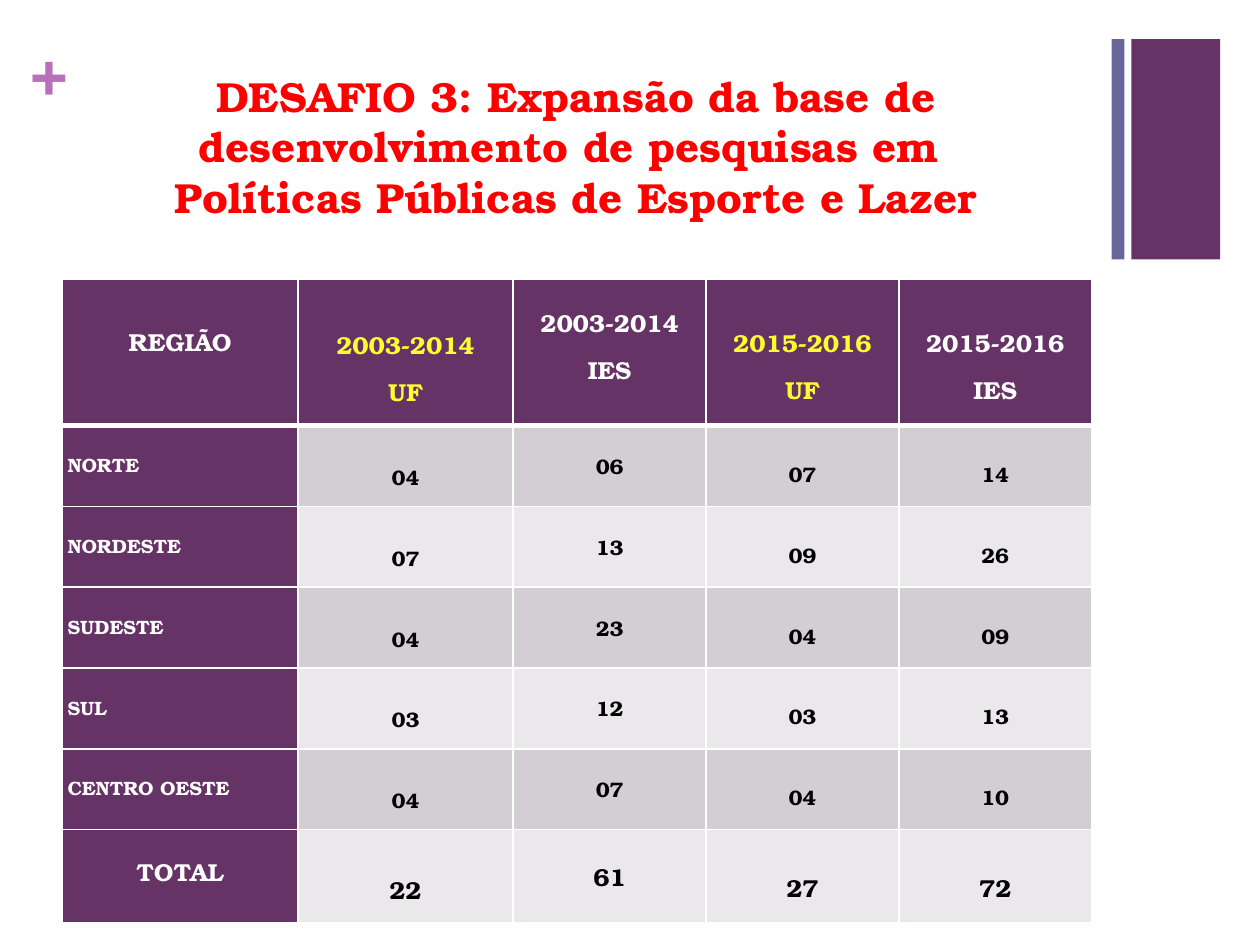
from lxml import etree
from pptx import Presentation
from pptx.dml.color import RGBColor
from pptx.enum.shapes import MSO_SHAPE
from pptx.enum.text import MSO_ANCHOR, MSO_AUTO_SIZE, PP_ALIGN
from pptx.oxml.ns import qn
from pptx.util import Pt

CENTER, LEFT = PP_ALIGN.CENTER, PP_ALIGN.LEFT
TOP = MSO_ANCHOR.TOP
NO_AUTOFIT = MSO_AUTO_SIZE.NONE
RECTANGLE = MSO_SHAPE.RECTANGLE

FONT = "TeX Gyre Bonum"
PURPLE = RGBColor(0x66, 0x33, 0x66)
BLUE = RGBColor(0x66, 0x66, 0x99)
ORCHID = RGBColor(0xB8, 0x70, 0xB8)
RED = RGBColor(0xFF, 0x00, 0x00)
YELLOW = RGBColor(0xFE, 0xFB, 0x31)
WHITE = RGBColor(0xFF, 0xFF, 0xFF)
BLACK = RGBColor(0x00, 0x00, 0x00)
BANDS = (RGBColor(0xD3, 0xCE, 0xD3), RGBColor(0xEA, 0xE8, 0xEA))

TITLE = ("DESAFIO 3: Expansão da base de desenvolvimento de pesquisas em ",
         "Políticas Públicas de Esporte e Lazer")
ROWS = (
    ("REGIÃO", "2003-2014\nUF", "2003-2014\nIES", "2015-2016\nUF", "2015-2016\nIES"),
    ("NORTE", "04", "06", "07", "14"),
    ("NORDESTE", "07", "13", "09", "26"),
    ("SUDESTE", "04", "23", "04", "09"),
    ("SUL", "03", "12", "03", "13"),
    ("CENTRO OESTE", "04", "07", "04", "10"),
    ("TOTAL", "22", "61", "27", "72"),
)
COLUMN_WIDTHS = (134.6, 123.1, 110.2, 110.2, 110.2)
HEADER_HEIGHT, REGION_HEIGHT, TOTAL_HEIGHT = 83.4, 46.2, 53.1
HEADER_INSETS = (24.8, 26.5, 13.9, 25.3, 25.3)
REGION_INSETS = (14.2, 20.4, 14.1, 18.7, 18.7)
TOTAL_INSETS = (13.4, 23.6, 16.2, 22.5, 22.5)


def write_lines(frame, lines, size, color, align, gap=0):
    """Write each line as a bold paragraph, with a gap between paragraphs."""
    for index, line in enumerate(lines):
        paragraph = frame.add_paragraph() if index else frame.paragraphs[0]
        paragraph.alignment = align
        paragraph.space_before = Pt(gap if index else 0)
        run = paragraph.add_run()
        run.text = line
        run.font.name, run.font.size, run.font.bold = FONT, Pt(size), True
        run.font.color.rgb = color


def add_ornament(slide, left, top, width, height):
    """Draw the thin blue bar and the wide purple block beside it."""
    bar_width, gap = 7.4, 3.9
    block_left = left + bar_width + gap
    for x, w, color in ((block_left, width - bar_width - gap, PURPLE),
                        (left, bar_width, BLUE)):
        bar = slide.shapes.add_shape(RECTANGLE, Pt(x), Pt(top), Pt(w), Pt(height))
        bar.shadow.inherit = False
        bar.fill.solid()
        bar.fill.fore_color.rgb = color
        bar.line.fill.background()


def add_plus(slide, left, top, width, height):
    """Place the plus sign at the corner of the slide."""
    frame = slide.shapes.add_textbox(Pt(left), Pt(top), Pt(width), Pt(height)).text_frame
    frame.word_wrap = True
    frame.margin_left = frame.margin_right = frame.margin_top = frame.margin_bottom = 0
    write_lines(frame, ("+",), 36, ORCHID, LEFT)


def place_title(slide, left, top, width, height):
    """Move the title placeholder and fill it with the heading."""
    title = slide.shapes.title
    title.left, title.top, title.width, title.height = map(Pt, (left, top, width, height))
    frame = title.text_frame
    frame.word_wrap, frame.auto_size, frame.vertical_anchor = True, NO_AUTOFIT, TOP
    write_lines(frame, TITLE, 24, RED, CENTER)


def set_borders(cell, top_width, bottom_width):
    """Give a cell white borders, one point wide at the sides."""
    properties = cell._tc.get_or_add_tcPr()
    for side, width in (("L", 1), ("R", 1), ("T", top_width), ("B", bottom_width)):
        line = etree.SubElement(properties, qn(f"a:ln{side}"), w=str(Pt(width)))
        fill = etree.SubElement(line, qn("a:solidFill"))
        etree.SubElement(fill, qn("a:srgbClr"), val=str(WHITE))


def fill_cell(cell, text, size, color, align, fill, inset):
    """Colour a cell and set its text below the given top inset."""
    cell.fill.solid()
    cell.fill.fore_color.rgb = fill
    cell.vertical_anchor = TOP
    cell.margin_left = cell.margin_right = Pt(3)
    cell.margin_top, cell.margin_bottom = Pt(inset), 0
    write_lines(cell.text_frame, text.split("\n"), size, color, align, gap=6.7)


def add_region_table(slide, left, top):
    """Build the table of counts by region and period."""
    last = len(ROWS) - 1
    heights = (HEADER_HEIGHT, *[REGION_HEIGHT] * (last - 1), TOTAL_HEIGHT)
    table = slide.shapes.add_table(
        len(ROWS), len(COLUMN_WIDTHS), Pt(left), Pt(top),
        Pt(sum(COLUMN_WIDTHS)), Pt(sum(heights))).table
    for column, width in zip(table.columns, COLUMN_WIDTHS):
        column.width = Pt(width)
    for r, (values, height) in enumerate(zip(ROWS, heights)):
        table.rows[r].height = Pt(height)
        is_region = 0 < r < last
        insets = REGION_INSETS if is_region else TOTAL_INSETS if r else HEADER_INSETS
        for c, (value, inset) in enumerate(zip(values, insets)):
            cell = table.cell(r, c)
            is_label = r == 0 or c == 0
            size = 14 if not is_region else 12 if c else 11
            color = WHITE if is_label else BLACK
            if value.endswith("\nUF"):
                color = YELLOW
            fill = PURPLE if is_label else BANDS[(r - 1) % 2]
            align = LEFT if is_region and c == 0 else CENTER
            set_borders(cell, 3 if r == 1 else 1, 3 if r == 0 else 1)
            fill_cell(cell, value, size, color, align, fill, inset)


def main():
    """Build the slide and save it."""
    deck = Presentation()
    deck.slide_width, deck.slide_height = Pt(720), Pt(540)
    slide = deck.slides.add_slide(deck.slide_layouts[5])
    add_ornament(slide, 635.2, 22.3, 62, 126)
    add_plus(slide, 17.3, 18, 21, 44)
    place_title(slide, 39.6, 36.7, 578.9, 94.3)
    add_region_table(slide, 35.6, 159.8)
    deck.save("out.pptx")


if __name__ == "__main__":
    main()
